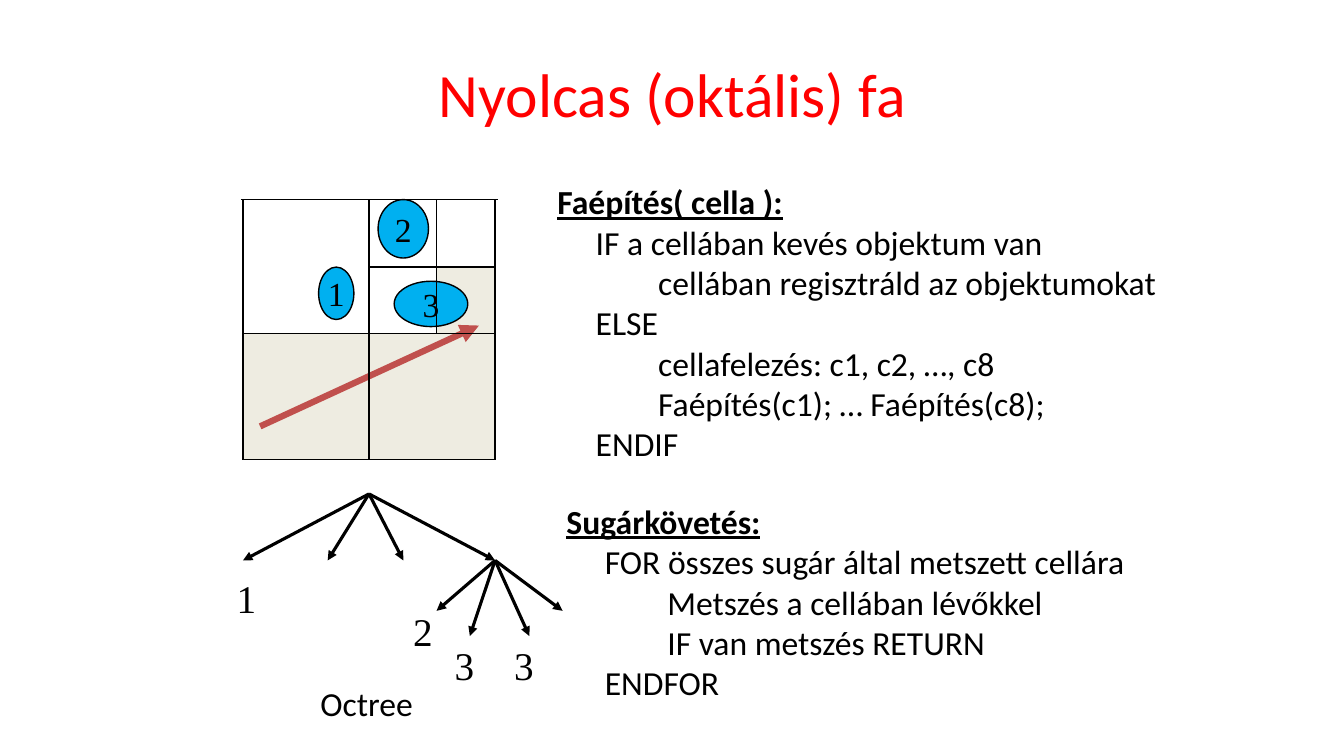
from lxml import etree
from pptx import Presentation
from pptx.dml.color import RGBColor
from pptx.enum.shapes import MSO_CONNECTOR, MSO_SHAPE
from pptx.enum.text import MSO_ANCHOR, PP_ALIGN
from pptx.oxml.ns import qn
from pptx.util import Inches, Pt

RECT, OVAL, STRAIGHT = MSO_SHAPE.RECTANGLE, MSO_SHAPE.OVAL, MSO_CONNECTOR.STRAIGHT
MIDDLE, TOP = MSO_ANCHOR.MIDDLE, MSO_ANCHOR.TOP
CENTER, LEFT = PP_ALIGN.CENTER, PP_ALIGN.LEFT
BLACK, RED = RGBColor(0, 0, 0), RGBColor(0xFF, 0, 0)
SAND, BLUE = RGBColor(0xEE, 0xEC, 0xE1), RGBColor(0, 0xB0, 0xF0)
BRICK = RGBColor(0xC0, 0x50, 0x4D)
SANS, SERIF = "Calibri", "Times New Roman"

# Content: every algorithm is a heading and (indent level, line) pairs.
TITLE = "Nyolcas (oktális) fa"
CAPTION = "Octree"
BUILD = ("Faépítés( cella ):", [
    (1, "IF a cellában kevés objektum van"),
    (2, "cellában regisztráld az objektumokat"),
    (1, "ELSE"),
    (2, "cellafelezés: c1, c2, …, c8"),
    (2, "Faépítés(c1); … Faépítés(c8);"),
    (1, "ENDIF"),
])
TRACE = ("Sugárkövetés:", [
    (1, "FOR összes sugár által metszett cellára"),
    (2, "Metszés a cellában lévőkkel"),
    (2, "IF van metszés RETURN"),
    (1, "ENDFOR"),
])
ALGORITHMS = [(BUILD, (5.43, 1.75, 6.2, 2.93)), (TRACE, (5.52, 4.92, 5.78, 2.12))]
INDENTS = (0, 0.38, 1)

# Grid lines of the subdivided space; cells are (column, row, end column, end row).
COLUMNS = (2.41, 3.66, 4.33, 4.91)
ROWS = (1.98, 2.65, 3.31, 4.56)
CROSSED_CELLS = [(2, 1, 3, 2), (0, 2, 3, 3)]
OUTLINED_CELLS = [(0, 0, 3, 3), (0, 0, 1, 3), (0, 2, 3, 3), (1, 0, 2, 2), (1, 0, 3, 1)]
RAY = ((2.58, 4.23), (4.75, 3.23))
OBJECTS = [("2", (3.75, 1.98, 0.5, 0.58)), ("1", (3.16, 2.65, 0.35, 0.52)),
           ("3", (3.91, 2.79, 0.73, 0.45))]

ROOT, SPLIT_NODE = (COLUMNS[1], 4.9), (COLUMNS[3], 5.56)
BRANCHES = {
    ROOT: [(COLUMNS[0], 5.56), (3.25, 5.56), (4, 5.56), SPLIT_NODE],
    SPLIT_NODE: [(4.33, 6.06), (4.66, 6.31), (5.25, 6.31), (5.58, 6.06)],
}
LEAVES = [("1", 2.25, 5.65), ("2", 4, 5.98), ("3", 4.41, 6.31), ("3", 5, 6.31)]

deck = Presentation()
deck.slide_width, deck.slide_height = Inches(13.33), Inches(7.5)
slide = deck.slides.add_slide(deck.slide_layouts[6])
shapes = slide.shapes


def write(paragraph, words, align=LEFT, indent=0, **font_format):
    paragraph.alignment = align
    if indent:
        paragraph._p.get_or_add_pPr().set("marL", str(Inches(indent)))
    run = paragraph.add_run()
    run.text = words
    color = font_format.pop("color", BLACK)
    for key, value in {"name": SANS, "size": Pt(24), **font_format}.items():
        setattr(run.font, key, value)
    run.font.color.rgb = color


def add_text(box, lines, anchor=TOP, wrap=False):
    """Add a text box; each line is (words, format)."""
    frame = shapes.add_textbox(*map(Inches, box)).text_frame
    frame.word_wrap, frame.vertical_anchor = wrap, anchor
    for number, (words, text_format) in enumerate(lines):
        paragraph = frame.add_paragraph() if number else frame.paragraphs[0]
        write(paragraph, words, **text_format)


def add_outlined(kind, box, fill=None):
    shape = shapes.add_shape(kind, *map(Inches, box))
    shape.shadow.inherit = False
    if fill is None:
        shape.fill.background()
    else:
        shape.fill.solid()
        shape.fill.fore_color.rgb = fill
    shape.line.color.rgb, shape.line.width = BLACK, Pt(1)
    return shape


def add_cell(cell, fill=None):
    column, row, end_column, end_row = cell
    left, top = COLUMNS[column], ROWS[row]
    add_outlined(RECT, (left, top, COLUMNS[end_column] - left, ROWS[end_row] - top), fill)


def add_line(start, end, color=BLACK, width=2.25, arrow=True):
    line = shapes.add_connector(STRAIGHT, *map(Inches, start + end))
    line.line.color.rgb, line.line.width = color, Pt(width)
    if arrow:
        etree.SubElement(line.line._get_or_add_ln(), qn("a:tailEnd"), type="triangle")
    etree.SubElement(line._element.spPr, qn("a:effectLst"))


add_text((0.67, 0.3, 12, 1.25),
         [(TITLE, {"size": Pt(44), "color": RED, "align": CENTER})], MIDDLE, True)

for (heading, steps), box in ALGORITHMS:
    add_text(box, [(heading, {"bold": True, "underline": True})]
             + [(step, {"indent": INDENTS[level]}) for level, step in steps])

for cell in CROSSED_CELLS:
    add_cell(cell, SAND)
add_line(*RAY, BRICK, 4.5)
for label, box in OBJECTS:
    frame = add_outlined(OVAL, box, BLUE).text_frame
    frame.word_wrap, frame.vertical_anchor = False, MIDDLE
    write(frame.paragraphs[0], label, CENTER, name=SERIF)
for cell in OUTLINED_CELLS:
    add_cell(cell)
add_line((2.39, ROWS[0]), (4.94, ROWS[0]), width=1, arrow=False)

for node, children in BRANCHES.items():
    for child in children:
        add_line(node, child)
for label, left, top in LEAVES:
    add_text((left, top, 0.4, 0.57), [(label, {"name": SERIF, "size": Pt(28)})])
add_text((3.08, 6.73, 1.13, 0.5), [(CAPTION, {})])

deck.save("out.pptx")
